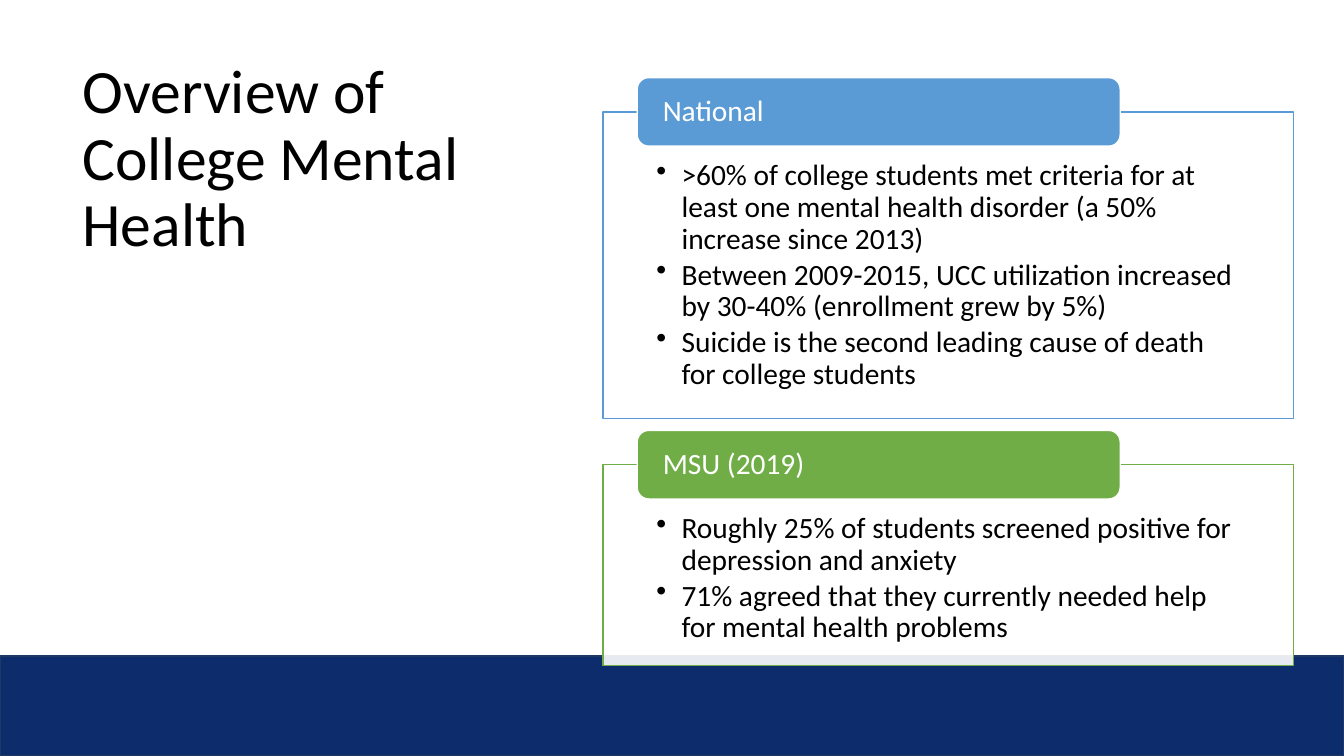
import pptx
import pptx.util
import pptx.dml.color
import pptx.enum.shapes
import pptx.enum.text
import pptx.oxml
import pptx.oxml.ns
import lxml.etree

Inches = pptx.util.Inches
Pt = pptx.util.Pt
SHAPE = pptx.enum.shapes.MSO_SHAPE
ANCHOR = pptx.enum.text.MSO_ANCHOR
qn = pptx.oxml.ns.qn


def rgb(value):
    return pptx.dml.color.RGBColor.from_string(value)


def add_box(kind, left, top, width, height, fill, line):
    sp = s.shapes.add_shape(kind, Inches(left), Inches(top), Inches(width), Inches(height))
    sp.shadow.inherit = False
    sp.fill.solid()
    sp.fill.fore_color.rgb = rgb(fill)
    sp.line.color.rgb = rgb(line)
    sp.line.width = Pt(1)
    return sp


def set_text(tf, lines, size, color, insets, anchor):
    tf.word_wrap = True
    tf.vertical_anchor = anchor
    tf.margin_left, tf.margin_top, tf.margin_right, tf.margin_bottom = map(Inches, insets)
    for i, line in enumerate(lines):
        p = tf.paragraphs[0] if i == 0 else tf.add_paragraph()
        p.text = line
        p.alignment = pptx.enum.text.PP_ALIGN.LEFT
        p.line_spacing = 0.9
        p.font.name = "Calibri"
        p.font.size = Pt(size)
        p.font.color.rgb = rgb(color)


prs = pptx.Presentation()
prs.slide_width = Inches(13.33)
prs.slide_height = Inches(7.5)
s = prs.slides.add_slide(prs.slide_layouts[6])

add_box(SHAPE.RECTANGLE, 0, 6.51, 13.33, 0.99, "0D2C6C", "203864")

title = s.shapes.add_textbox(Inches(0.72), Inches(0.55), Inches(4.47), Inches(5.97))
set_text(title.text_frame, ["Overview of College Mental Health"], 44, "000000",
         (0.1, 0.05, 0.1, 0.05), ANCHOR.TOP)

sections = [
    ("National", "5B9BD5", 1.11, 3.04, [
        ">60% of college students met criteria for at least one mental health disorder (a 50% increase since 2013)",
        "Between 2009-2015, UCC utilization increased by 30-40% (enrollment grew by 5%)",
        "Suicide is the second leading cause of death for college students",
    ]),
    ("MSU (2019)", "70AD47", 4.61, 1.99, [
        "Roughly 25% of students screened positive for depression and anxiety",
        "71% agreed that they currently needed help for mental health problems",
    ]),
]

for heading, color, top, height, bullets in sections:
    panel = add_box(SHAPE.RECTANGLE, 5.98, top, 6.85, height, "FFFFFF", color)
    clr = panel.fill._xPr.find(qn("a:solidFill"))[0]
    lxml.etree.SubElement(clr, qn("a:alpha")).set("val", "90000")
    set_text(panel.text_frame, bullets, 21, "000000", (0.53, 0.48, 0.53, 0.16), ANCHOR.TOP)
    for p in panel.text_frame.paragraphs:
        p.space_after = Pt(3)
        pPr = p._p.get_or_add_pPr()
        pPr.set("marL", str(Inches(0.25)))
        pPr.set("indent", str(Inches(-0.25)))
        bullet = pptx.oxml.parse_xml(
            '<a:buChar xmlns:a="http://schemas.openxmlformats.org/drawingml/2006/main" char="•"/>')
        pPr.find(qn("a:defRPr")).addprevious(bullet)

    label = add_box(SHAPE.ROUNDED_RECTANGLE, 6.32, top - 0.34, 4.79, 0.68, color, "FFFFFF")
    set_text(label.text_frame, [heading], 21, "FFFFFF", (0.22, 0, 0.22, 0), ANCHOR.MIDDLE)

prs.save("out.pptx")
